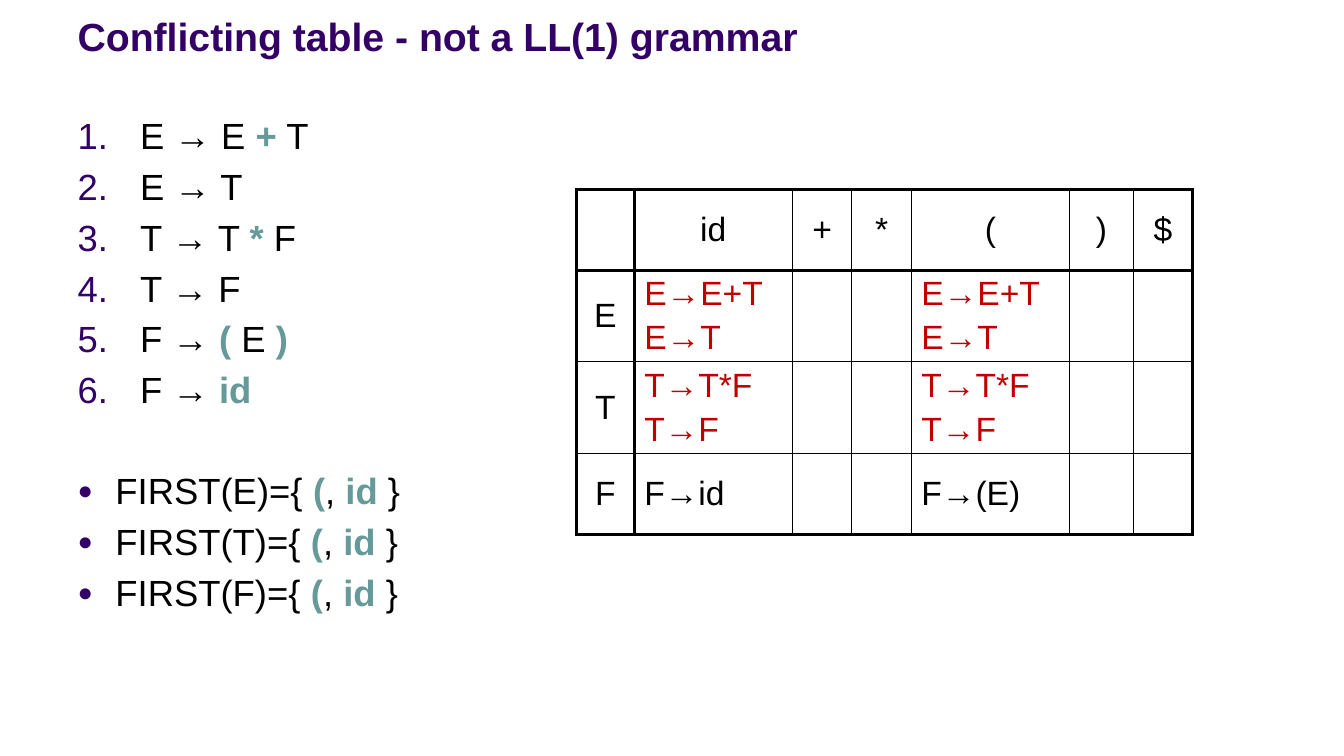
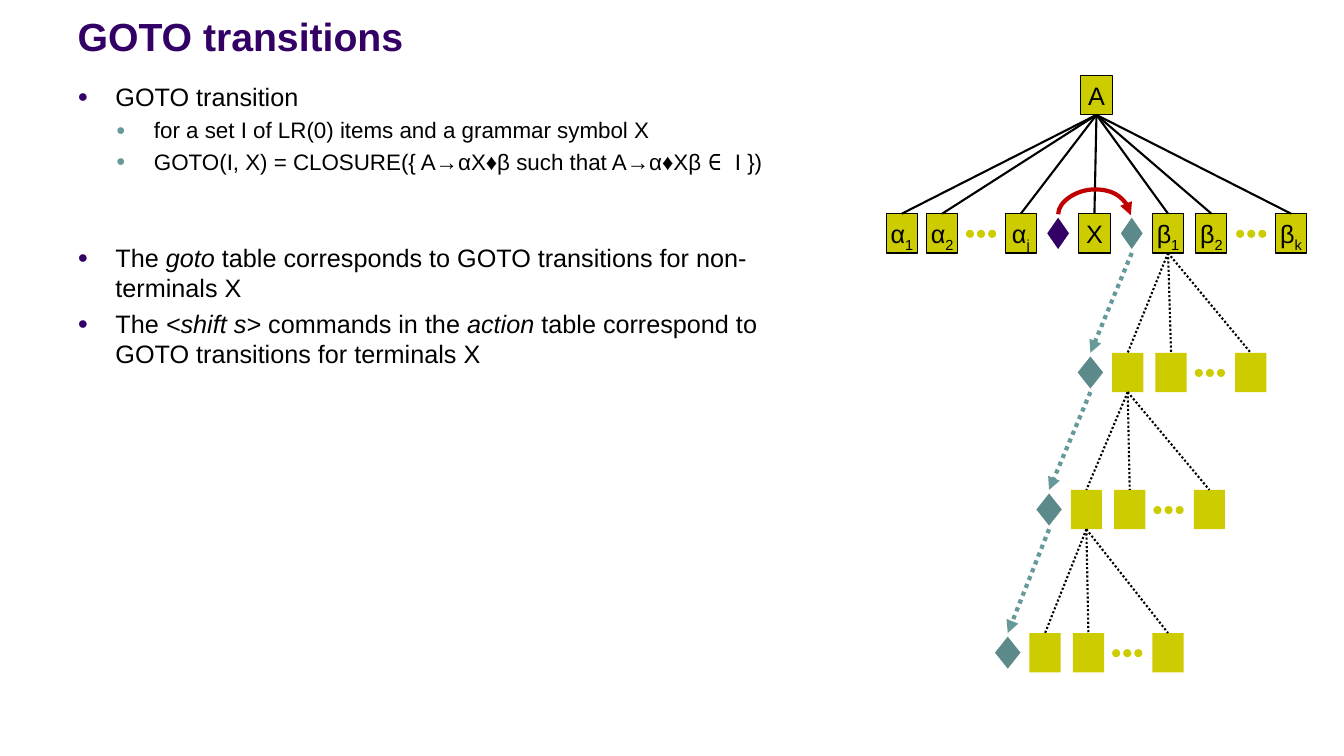
from lxml import etree
from pptx import Presentation
from pptx.dml.color import RGBColor
from pptx.enum.dml import MSO_LINE
from pptx.enum.shapes import MSO_CONNECTOR, MSO_SHAPE
from pptx.enum.text import MSO_ANCHOR, MSO_AUTO_SIZE, PP_ALIGN
from pptx.oxml.ns import qn
from pptx.util import Inches, Pt


class Theme:
    font, math_font = "Arial", "DejaVu Sans Mono"
    purple = RGBColor.from_string("330066")
    teal = RGBColor.from_string("669999")
    dark_teal = RGBColor.from_string("5C8A8A")
    olive = RGBColor.from_string("CCCC00")
    red = RGBColor.from_string("C00000")
    black = RGBColor.from_string("000000")
    white = RGBColor.from_string("FFFFFF")
    title, rules, cell, text, subtext = Pt(28), Pt(26), Pt(24), Pt(18), Pt(16)
    thick, thin = Pt(2.25), Pt(1)


# Run styles, named in the text below
STYLES = {
    "plain": {},
    "title": {"bold": True, "color": Theme.purple},
    "terminal": {"bold": True, "color": Theme.teal},
    "italic": {"italic": True},
    "conflict": {"color": Theme.red},
    "math": {"name": Theme.math_font},
    "sub": {"baseline": "-25000"},
}


def write(p, runs, size):
    """Add runs, each a string or a (text, style) pair, to a paragraph."""
    for run in runs:
        text, style = (run, "plain") if isinstance(run, str) else run
        fmt = {"name": Theme.font, "size": size, "bold": False,
               "color": Theme.black} | STYLES[style]
        r = p.add_run()
        r.text = text
        r.font.color.rgb = fmt.pop("color")
        if "baseline" in fmt:
            r.font._element.set("baseline", fmt.pop("baseline"))
        for name, value in fmt.items():
            setattr(r.font, name, value)


def link(s, ends, color, width, kind=MSO_CONNECTOR.STRAIGHT, dash=None, arrow=False):
    """Draw a connector between two points, given in inches."""
    c = s.shapes.add_connector(kind, *[Inches(v) for v in ends])
    c.line.color.rgb, c.line.width = color, width
    if dash:
        c.line.dash_style = dash
    if arrow:
        etree.SubElement(c.line._get_or_add_ln(), qn("a:tailEnd"), type="triangle")
    etree.SubElement(c._element.spPr, qn("a:effectLst"))
    return c


# Paragraph kinds: level, size, left indent, hanging indent, bullet colour
KINDS = {
    "rule": (0, Theme.rules, Inches(0.62), Inches(0.62), Theme.purple),
    "set": (0, Theme.rules, Pt(27), Pt(27), Theme.purple),
    "point": (0, Theme.text, Pt(27), Pt(27), Theme.purple),
    "detail": (1, Theme.subtext, Pt(54.5), Pt(27), Theme.teal),
}
first_sets = [("set", 41 if symbol == "E" else None,
               [f"FIRST({symbol})={{ ", ("(", "terminal"), ", ", ("id", "terminal"), " }"])
              for symbol in "ETF"]

# Title, body box, and body paragraphs as (kind, gap above in points, runs)
SLIDES = [
    ("Conflicting table - not a LL(1) grammar", (0.67, 1.07, 4.43, 5.35), [
        ("rule", None, ["E → E ", ("+", "terminal"), " T"]),
        ("rule", None, ["E → T"]),
        ("rule", None, ["T → T ", ("*", "terminal"), " F"]),
        ("rule", None, ["T → F"]),
        ("rule", None, ["F → ", ("(", "terminal"), " E ", (")", "terminal")]),
        ("rule", None, ["F → ", ("id", "terminal")]),
        *first_sets,
    ]),
    ("GOTO transitions", (0.67, 0.76, 7.34, 6.22), [
        ("point", None, ["GOTO transition"]),
        ("detail", None, ["for a set I of LR(0) items and a grammar symbol X"]),
        ("detail", None, ["GOTO(I, X) = CLOSURE({ A→αX♦β such that A→α♦Xβ ",
                          ("∈ ", "math"), "I })"]),
        ("point", 48.5, ["The ", ("goto ", "italic"),
                         "table corresponds to GOTO transitions for non-terminals X"]),
        ("point", None, ["The ", ("<shift s>", "italic"), " commands in the ",
                         ("action ", "italic"),
                         "table correspond to GOTO transitions for terminals X"]),
    ]),
]

prs = Presentation()
prs.slide_width, prs.slide_height = Inches(13.33), Inches(7.5)

# Titles and lists
for title, box, paragraphs in SLIDES:
    s = prs.slides.add_slide(prs.slide_layouts[1])
    sp, body = s.shapes.title, s.placeholders[1]
    for holder, place in ((sp, (0.67, 0.13, 12, 0.51)), (body, box)):
        holder.left, holder.top, holder.width, holder.height = map(Inches, place)
        holder.text_frame.auto_size = MSO_AUTO_SIZE.NONE
    sp.text_frame.vertical_anchor = MSO_ANCHOR.BOTTOM
    p = sp.text_frame.paragraphs[0]
    p.alignment = PP_ALIGN.LEFT
    write(p, [(title, "title")], Theme.title)

    tf = body.text_frame
    for i, (kind, gap, runs) in enumerate(paragraphs):
        level, size, indent, hanging, color = KINDS[kind]
        p = tf.paragraphs[0] if i == 0 else tf.add_paragraph()
        p.level = level
        if gap:
            p.space_before = Pt(gap)
        pPr = p._p.get_or_add_pPr()
        pPr.set("marL", str(indent))
        pPr.set("indent", str(-hanging))
        etree.SubElement(etree.SubElement(pPr, qn("a:buClr")),
                         qn("a:srgbClr"), val=str(color))
        if kind == "rule":
            etree.SubElement(pPr, qn("a:buFont"), typeface=Theme.font)
            etree.SubElement(pPr, qn("a:buAutoNum"), type="arabicPeriod")
        else:
            etree.SubElement(pPr, qn("a:buSzPct"), val="70000")
            etree.SubElement(pPr, qn("a:buFont"), typeface=Theme.font)
            etree.SubElement(pPr, qn("a:buChar"), char="●")
        write(p, runs, size)

table_slide, tree_slide = prs.slides

# Parsing table
ROWS = [
    ["", "id", "+", "*", "(", ")", "$"],
    ["E", "E→E+T\nE→T", "", "", "E→E+T\nE→T", "", ""],
    ["T", "T→T*F\nT→F", "", "", "T→T*F\nT→F", "", ""],
    ["F", "F→id", "", "", "F→(E)", "", ""],
]
col_widths = [0.57, 1.57, 0.59, 0.59, 1.57, 0.63, 0.59]
row_heights = [0.8, 0.91, 0.91, 0.8]
last_row, last_col = len(ROWS) - 1, len(col_widths) - 1
table = table_slide.shapes.add_table(
    len(ROWS), len(col_widths), Inches(5.72), Inches(1.88),
    Inches(sum(col_widths)), Inches(sum(row_heights))).table
table.first_row = table.horz_banding = False
for col, width in zip(table.columns, col_widths):
    col.width = Inches(width)
for row, height in zip(table.rows, row_heights):
    row.height = Inches(height)

for i, row in enumerate(ROWS):
    for j, text in enumerate(row):
        cell = table.cell(i, j)
        cell.vertical_anchor = MSO_ANCHOR.MIDDLE
        # Thick lines frame the table, its head row and its first column
        sides = {"L": j in (0, 1), "R": j in (0, last_col),
                 "T": i in (0, 1), "B": i in (0, last_row)}
        for side, is_thick in sides.items():
            ln = etree.SubElement(cell._tc.get_or_add_tcPr(), qn(f"a:ln{side}"),
                                  w=str(Theme.thick if is_thick else Theme.thin))
            fill = etree.SubElement(ln, qn("a:solidFill"))
            etree.SubElement(fill, qn("a:srgbClr"), val=str(Theme.black))
        cell.fill.background()
        lines = text.split("\n")
        style = "conflict" if len(lines) > 1 else "plain"
        for k, line in enumerate(lines):
            p = cell.text_frame.paragraphs[0] if k == 0 else cell.text_frame.add_paragraph()
            if k:
                p.space_before = Pt(4.8)
            if i == 0 or j == 0:
                p.alignment = PP_ALIGN.CENTER
            write(p, [(line, style)] if line else [], Theme.cell)

# Derivation tree: boxes as (key, left, top, label), diamonds and dots by row
BOX_W, BOX_H, DOT = 0.31, 0.39, 0.08
LEAF_TOP = 2.12
LEVELS = [(11.03, 3.5), (10.62, 4.86), (10.21, 6.28)]
boxes = [("A", 10.72, 0.75, ["A"]), ("X", 10.7, LEAF_TOP, ["X"])]
for letter, left, steps in (("α", 8.79, {"1": 0, "2": 0.4, "j": 1.18}),
                            ("β", 11.43, {"1": 0, "2": 0.43, "k": 1.22})):
    boxes += [(letter + index, left + step, LEAF_TOP, [letter, (index, "sub")])
              for index, step in steps.items()]
diamonds = [("before X", 10.36, LEAF_TOP, 0.27, Theme.purple),
            ("mark 0", 11.09, LEAF_TOP, 0.27, Theme.dark_teal)]
dot_rows = [(9.58, LEAF_TOP), (12.26, LEAF_TOP)]
for n, (left, top) in enumerate(LEVELS, 1):
    boxes += [(f"child {n}.{k}", left + step, top, [])
              for k, step in enumerate((0, 0.43, 1.22))]
    diamonds.append((f"mark {n}", left - 0.37, top, BOX_W, Theme.dark_teal))
    dot_rows.append((left + 0.82, top))

# Each shape: key, preset, box, fill, line colour, line width, label
parts = [(key, MSO_SHAPE.RECTANGLE, (left, top, BOX_W, BOX_H), Theme.olive,
          Theme.black if label else None, Pt(0.75), label)
         for key, left, top, label in boxes]
parts += [(key, MSO_SHAPE.DIAMOND, (left, top, width, BOX_H), color,
           Theme.white, Pt(3), []) for key, left, top, width, color in diamonds]
parts += [(f"dot {n}.{k}", MSO_SHAPE.OVAL, (left + 0.11 * k, top + 0.16, DOT, DOT),
           Theme.olive, None, None, [])
          for n, (left, top) in enumerate(dot_rows) for k in range(3)]

nodes = {}
for key, preset, place, color, line_color, line_width, label in parts:
    sp = nodes[key] = tree_slide.shapes.add_shape(preset, *map(Inches, place))
    sp.shadow.inherit = False
    sp.fill.solid()
    sp.fill.fore_color.rgb = color
    if line_color is None:
        sp.line.fill.background()
    else:
        sp.line.color.rgb, sp.line.width = line_color, line_width
    if label:
        tf = sp.text_frame
        tf.word_wrap = False
        tf.vertical_anchor = MSO_ANCHOR.TOP
        tf.margin_left = tf.margin_right = Inches(0.04)
        p = tf.paragraphs[0]
        p.alignment = PP_ALIGN.CENTER
        write(p, label, Theme.text)

# Tree edges run from the bottom of a parent to the top of a child
solid = {"color": Theme.black, "width": Pt(1.5)}
dotted = solid | {"dash": MSO_LINE.ROUND_DOT}
descent = {"color": Theme.teal, "width": Pt(3), "dash": MSO_LINE.ROUND_DOT, "arrow": True}
edges = [("A", leaf, solid) for leaf in ("α1", "α2", "αj", "X", "β1", "β2", "βk")]
for n in range(1, len(LEVELS) + 1):
    parent = "β1" if n == 1 else f"child {n - 1}.0"
    edges += [(parent, f"child {n}.{k}", dotted) for k in range(3)]
    edges.append((f"mark {n - 1}", f"mark {n}", descent))
for start, end, look in edges:
    c = link(tree_slide, (0, 0, 1, 1), **look)
    c.begin_connect(nodes[start], 2)
    c.end_connect(nodes[end], 0)

# Curved arrow over X, turned upright so that it arches above both diamonds
c = link(tree_slide, (10.85, 1.77, 10.86, 2.49), Theme.red, Pt(3),
         kind=MSO_CONNECTOR.CURVE, arrow=True)
xfrm = c._element.spPr.find(qn("a:xfrm"))
xfrm.set("rot", str(270 * 60000))
xfrm.set("flipH", "1")
etree.SubElement(c._element.spPr.find(qn("a:prstGeom")).find(qn("a:avLst")),
                 qn("a:gd"), name="adj1", fmla="val -2500000")

prs.save("out.pptx")
